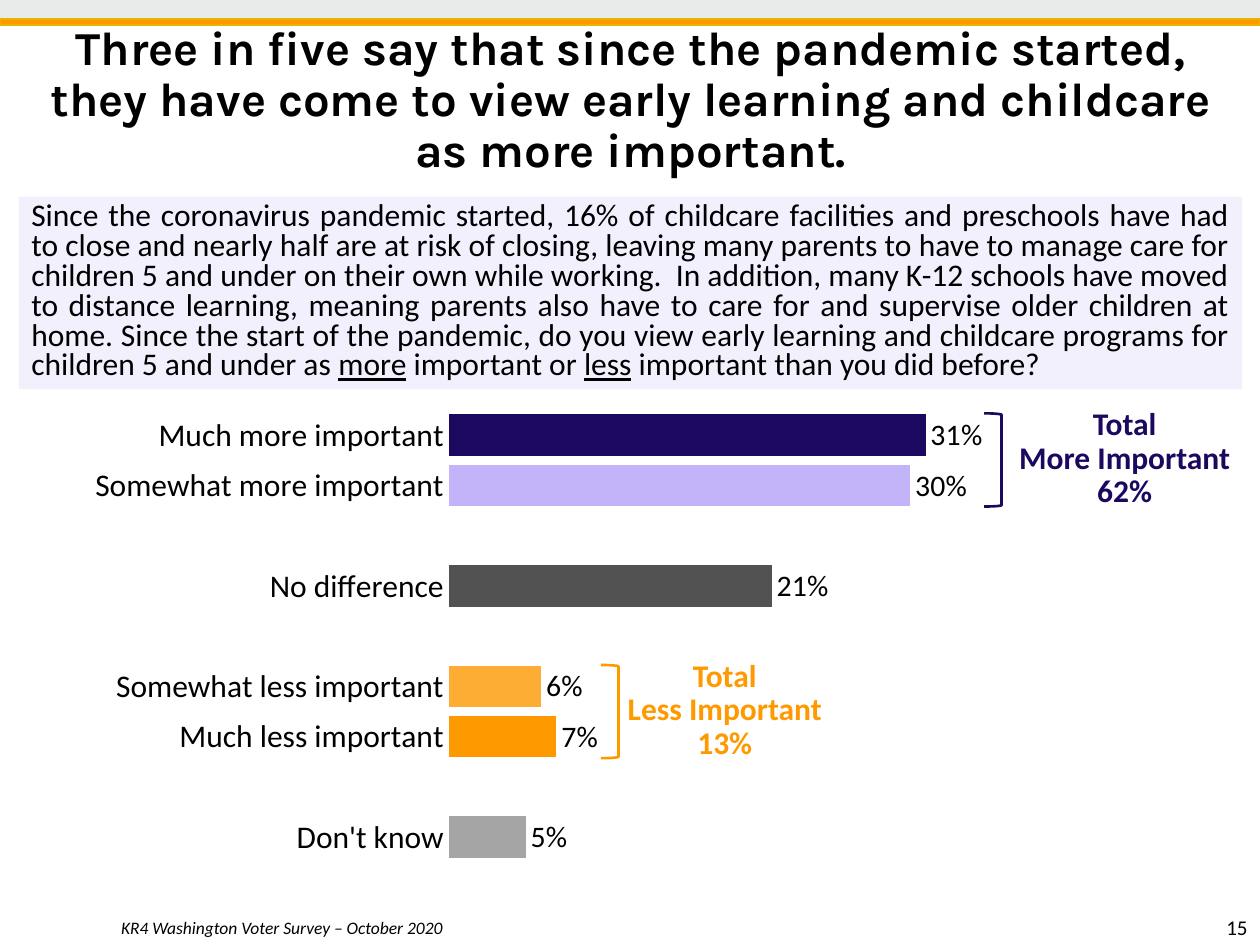
from dataclasses import dataclass
from lxml import etree
from pptx import Presentation
from pptx.chart import data as cd
from pptx.dml.color import RGBColor
from pptx.enum import chart as ch, shapes, text
from pptx.oxml import parse_xml
from pptx.oxml.ns import nsdecls, qn
from pptx.util import Pt


@dataclass(frozen=True)
class Theme:
    font: str = "Calibri"
    head: str = "Karla"
    ink: str = "000000"
    navy: str = "1C085F"
    lilac: str = "C3B3F8"
    pale: str = "F3F0FE"
    dark: str = "525252"
    grey: str = "A5A5A5"
    amber: str = "FDAD34"
    gold: str = "FF9900"
    rim: str = "EBB201"
    band: str = "E8EBE9"
    title: int = 27
    body: int = 18
    value: int = 17
    page: int = 12
    note: int = 10


T = Theme()
MID, END = text.PP_ALIGN.CENTER, text.PP_ALIGN.RIGHT

ROWS = [
    ("Much more important", 0.31, T.navy),
    ("Somewhat more important", 0.30, T.lilac),
    ("", None, None),
    ("No difference", 0.21, T.dark),
    ("", None, None),
    ("Somewhat less important", 0.06, T.amber),
    ("Much less important", 0.07, T.gold),
    ("", None, None),
    ("Don't know", 0.05, T.grey),
]

# Question wording; every second part is underlined
QUERY = [
    "Since the coronavirus pandemic started, 16% of childcare facilities and "
    "preschools have had to close and nearly half are at risk of closing, leaving "
    "many parents to have to manage care for children 5 and under on their own while "
    "working.  In addition, many K-12 schools have moved to distance learning, meaning "
    "parents also have to care for and supervise older children at home. Since the "
    "start of the pandemic, do you view early learning and childcare programs for "
    "children 5 and under as ",
    "more", " important or ", "less", " important than you did before?",
]


def rgb(code):
    return RGBColor.from_string(code)


def style(font, size, color=T.ink, name=T.font, bold=False, italic=False):
    font.size, font.name = Pt(size), name
    font.bold, font.italic = bold, italic
    font.color.rgb = rgb(color)


def place(shape, box):
    shape.left, shape.top, shape.width, shape.height = map(Pt, box)


def shape(slide, kind, box, fill=None, line=None, width=1):
    item = slide.shapes.add_shape(kind, *map(Pt, box))
    item.shadow.inherit = False
    if fill:
        item.fill.solid()
        item.fill.fore_color.rgb = rgb(fill)
    else:
        item.fill.background()
    if line:
        item.line.color.rgb = rgb(line)
        item.line.width = Pt(width)
    else:
        item.line.fill.background()
    return item


def label(slide, box, words, size, color=T.ink, align=MID, bold=False, space=None):
    frame = slide.shapes.add_textbox(*map(Pt, box)).text_frame
    frame.word_wrap = True
    frame.text = words
    para = frame.paragraphs[0]
    para.alignment, para.line_spacing = align, space
    for run in para.runs:
        style(run.font, size, color, bold=bold)


def banner(slide, box):
    x, y, w, h = box
    rect = shapes.MSO_SHAPE.RECTANGLE
    shape(slide, rect, box, T.band)
    shape(slide, rect, (x, y + h * 0.75, w, h * 0.25), T.gold, T.rim)


def title(slide, box, words):
    item = slide.shapes.title
    place(item, box)
    frame = item.text_frame
    frame.text = words
    frame.vertical_anchor = text.MSO_ANCHOR.MIDDLE
    frame.auto_size = text.MSO_AUTO_SIZE.NONE
    para = frame.paragraphs[0]
    para.alignment, para.line_spacing = MID, 0.9
    style(para.runs[0].font, T.title, name=T.head, bold=True)


def query(slide, box):
    frame = shape(slide, shapes.MSO_SHAPE.RECTANGLE, box, T.pale).text_frame
    frame.word_wrap = True
    para = frame.paragraphs[0]
    para.alignment, para.line_spacing = text.PP_ALIGN.JUSTIFY, Pt(17)
    for i, part in enumerate(QUERY):
        run = para.add_run()
        run.text = part
        style(run.font, T.body)
        run.font.underline = i % 2 == 1


def bars(slide, box):
    data = cd.CategoryChartData(number_format="0%")
    names, vals, tints = zip(*ROWS)
    data.categories = names
    data.add_series("Series 1", vals)
    chart = slide.shapes.add_chart(
        ch.XL_CHART_TYPE.BAR_CLUSTERED, *map(Pt, box), data).chart
    chart.has_legend = chart.has_title = False
    style(chart.font, T.body)

    # Axes
    cat, val = chart.category_axis, chart.value_axis
    cat.reverse_order = True
    cat.major_tick_mark = ch.XL_TICK_MARK.NONE
    cat.format.line.fill.background()
    style(cat.tick_labels.font, T.body)
    val.minimum_scale, val.maximum_scale, val.major_unit = 0, 0.45, 0.15
    val.has_major_gridlines = val.visible = False

    # Bars and their values
    plot = chart.plots[0]
    plot.gap_width, plot.vary_by_categories = 21, False
    series = plot.series[0]
    series.format.fill.solid()
    series.format.fill.fore_color.rgb = rgb(T.lilac)
    for i, tint in enumerate(tints):
        if tint:
            fill = series.points[i].format.fill
            fill.solid()
            fill.fore_color.rgb = rgb(tint)
    marks = series.data_labels
    marks.show_value = True
    marks.position = ch.XL_LABEL_POSITION.OUTSIDE_END
    marks.number_format, marks.number_format_is_linked = "0%", False
    style(marks.font, T.value)

    # Fixed inner plot area
    area = chart._chartSpace.chart.plotArea
    for old in area.findall(qn("c:layout")):
        area.remove(old)
    lay = parse_xml(f"<c:layout {nsdecls('c')}><c:manualLayout/></c:layout>")
    for tag, setting in (("layoutTarget", "inner"), ("xMode", "edge"),
                         ("yMode", "edge"), ("x", 0.353), ("y", 0.019),
                         ("w", 0.615), ("h", 0.911)):
        etree.SubElement(lay[0], qn("c:" + tag)).set("val", str(setting))
    area.insert(0, lay)


def total(slide, box, words, color, gap):
    """Bracket at the left of the box, its label to the right."""
    x, y, w, h = box
    shape(slide, shapes.MSO_SHAPE.RIGHT_BRACKET, (x, y, 10, h), None, color, 1.5)
    label(slide, (x + gap, y - 6, w, 65), words, T.body, color,
          bold=True, space=Pt(19))


def footer(slide, box, words, page):
    item = slide.placeholders[1]
    place(item, box)
    frame = item.text_frame
    frame.text = words
    frame.vertical_anchor = text.MSO_ANCHOR.BOTTOM
    frame.auto_size = text.MSO_AUTO_SIZE.NONE
    para = frame.paragraphs[0]
    props = para._p.get_or_add_pPr()
    props.set("marL", "0")
    props.set("indent", "0")
    etree.SubElement(props, qn("a:buNone"))
    para.line_spacing, para.space_before = 0.9, Pt(0)
    style(para.runs[0].font, T.note, italic=True)
    label(slide, (613.5, 519, 106.5, 21.5), page, T.page, align=END)


def main():
    deck = Presentation()
    deck.slide_width, deck.slide_height = Pt(720), Pt(540)
    slide = deck.slides.add_slide(deck.slide_layouts[1])
    banner(slide, (0, 0, 720, 14.4))
    title(slide, (10.8, 13, 699, 90),
          "Three in five say that since the pandemic started, they have come "
          "to view early learning and childcare as more important.")
    query(slide, (10.8, 112.3, 699, 110))
    bars(slide, (29.5, 229, 643, 283.7))
    total(slide, (562.3, 236.2, 143.3, 53.3),
          "Total\vMore Important\v62%", T.navy, 8.7)
    total(slide, (343.4, 380, 129.6, 53.3),
          "Total\vLess Important\v13%", T.gold, 6)
    footer(slide, (62, 496.8, 638, 43.2),
           "KR4 Washington Voter Survey – October 2020", "15")
    deck.save("out.pptx")


if __name__ == "__main__":
    main()
